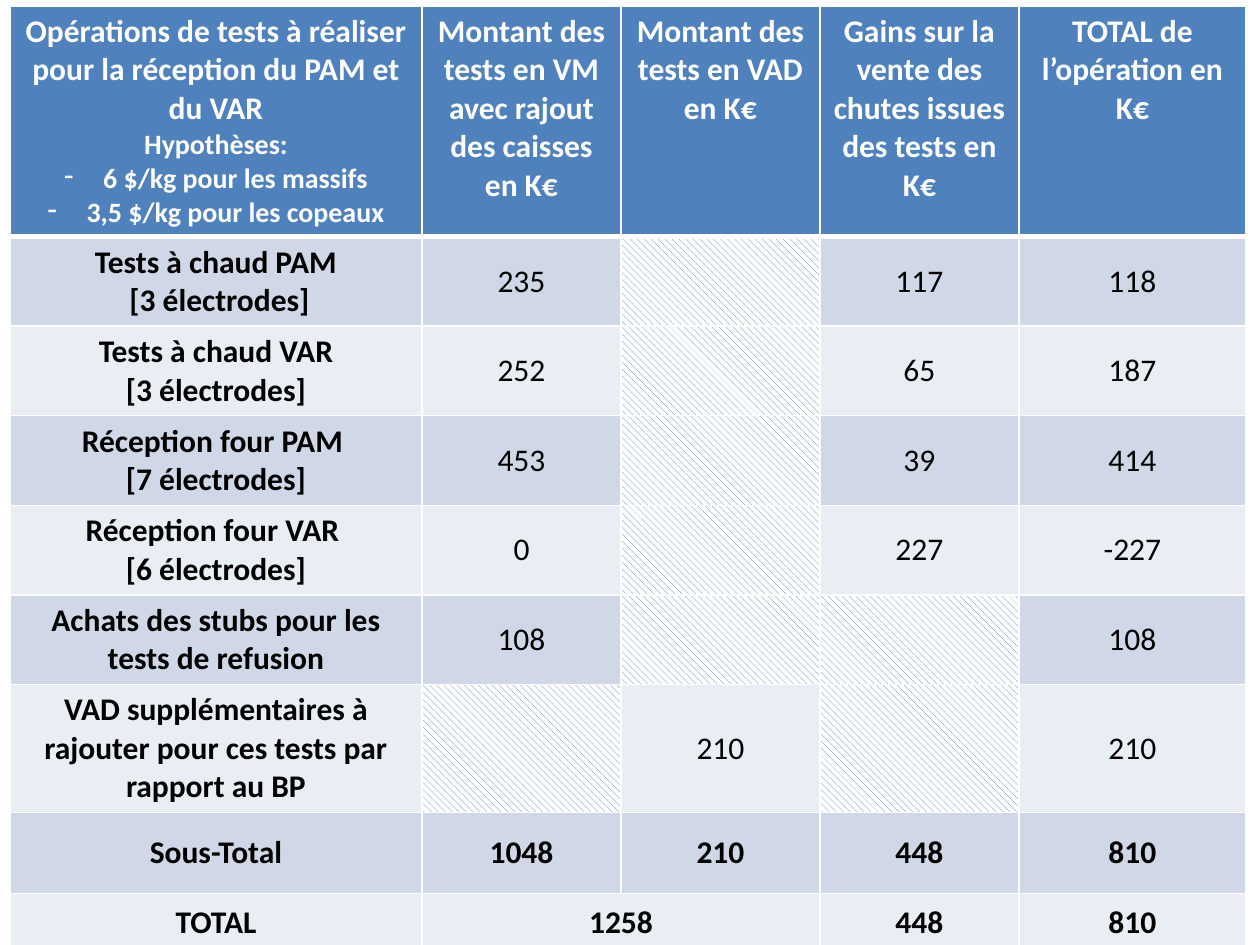
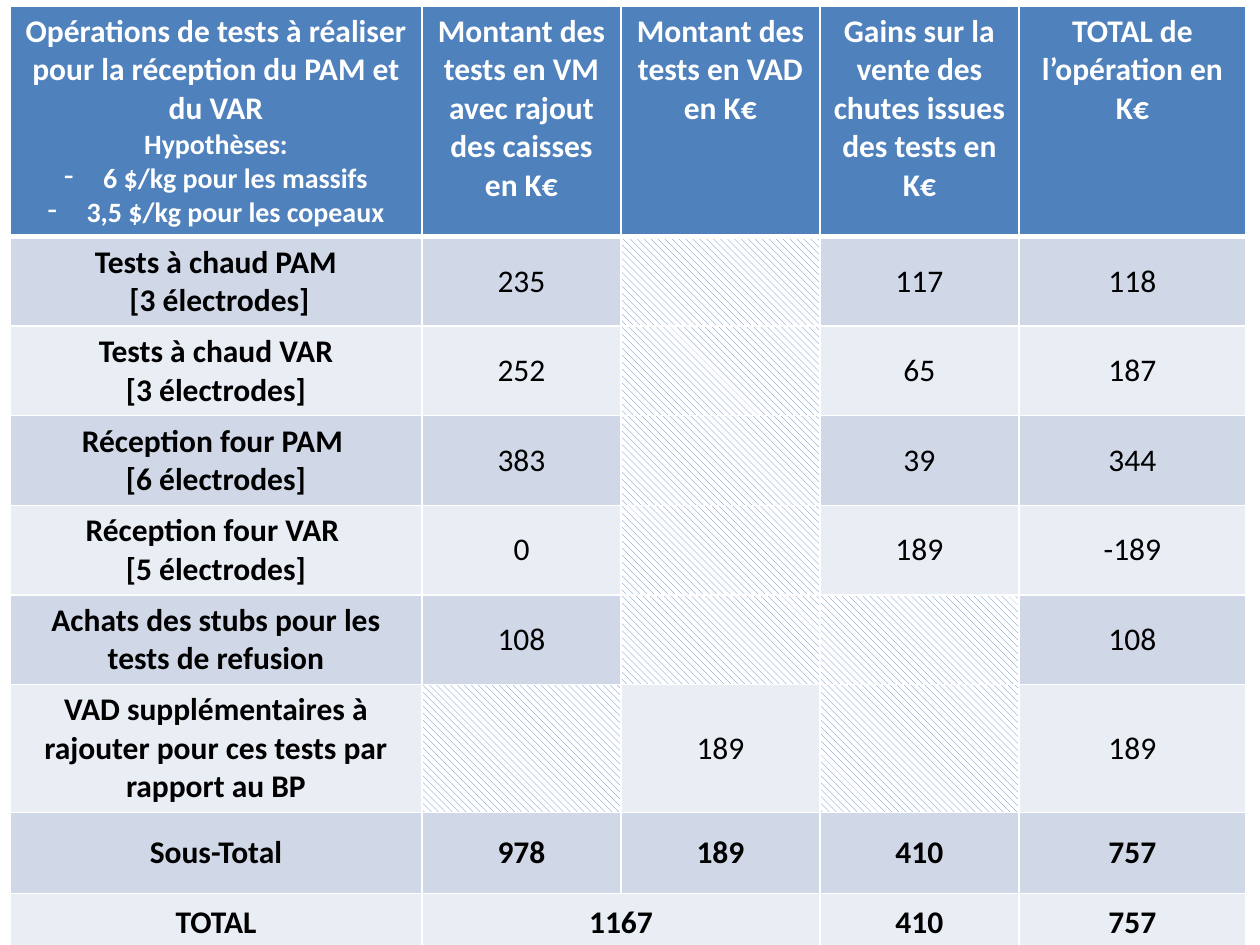
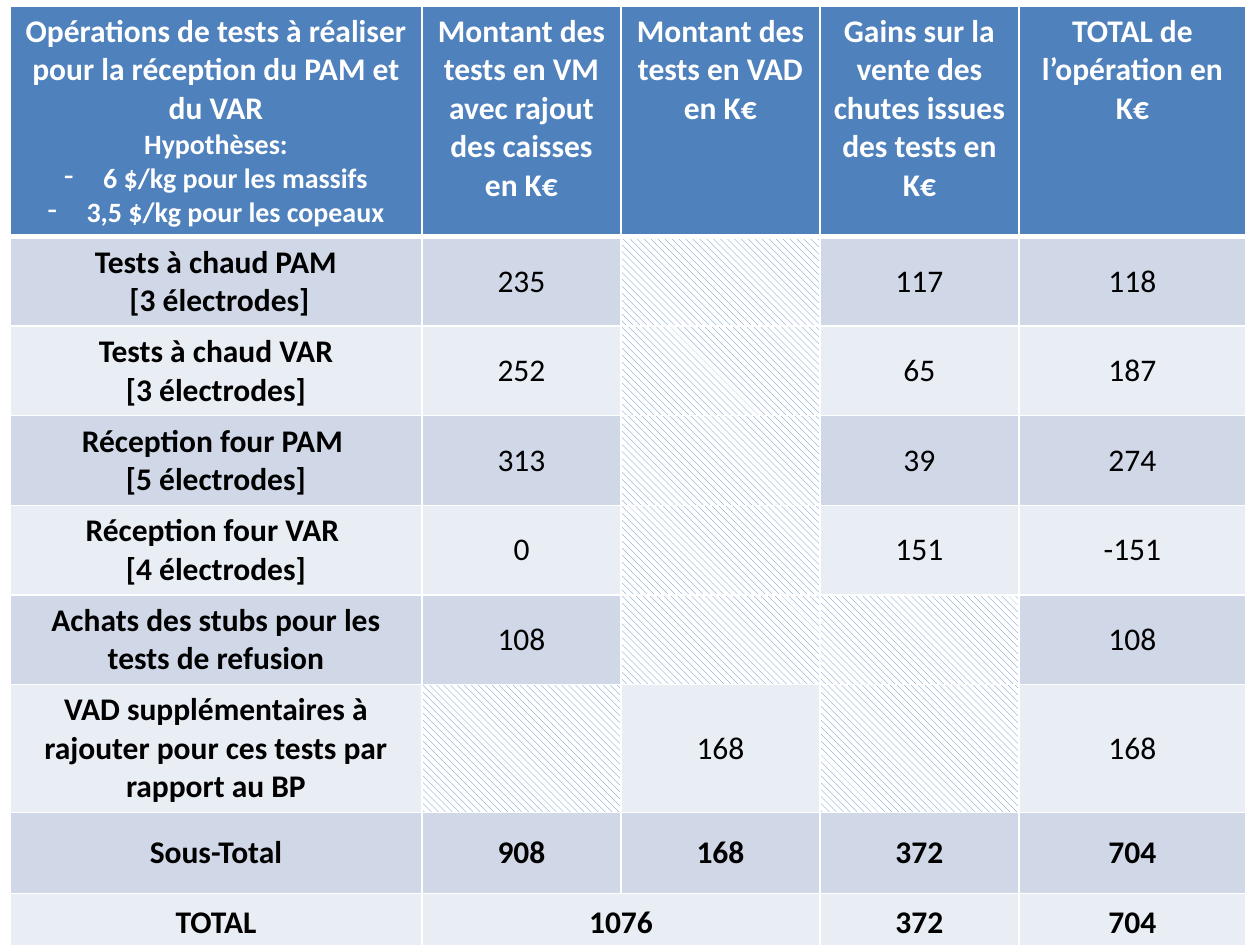
import lxml.etree
import pptx
import pptx.dml.color
import pptx.enum.dml
import pptx.enum.text
import pptx.oxml.ns
import pptx.util

SCALE = 914400 / 126
BLUE, WHITE, BLACK = "4F81BD", "FFFFFF", "000000"
BANDS = ("D0D8E8", "E9EDF4")
COLS = (412, 199, 199, 199, 227)
ROWS = (226, 88, 88, 88, 88, 88, 125, 81, 58)
HEADS = (
    ("Opérations de tests à réaliser pour la réception du PAM et du VAR",
     "Hypothèses:", "6 $/kg pour les massifs", "3,5 $/kg pour les copeaux"),
    ("Montant des tests en VM avec rajout des caisses", "en K€"),
    ("Montant des tests en VAD en K€",),
    ("Gains sur la vente des chutes issues des tests en K€",),
    ("TOTAL de l’opération en K€",),
)
# Electrodes (PAM, VAR), PAM acceptance cost, VAR scrap gain, added VAD
CASES = ((7, 6, 453, 227, 210), (6, 5, 383, 189, 189), (5, 4, 313, 151, 168))


def px(n):
    return pptx.util.Emu(round(n * SCALE))


def rgb(code):
    return pptx.dml.color.RGBColor.from_string(code)


def tag(parent, name, **attrs):
    """Append a drawing element to parent."""
    return lxml.etree.SubElement(parent, pptx.oxml.ns.qn("a:" + name), attrs)


def edge(cell, top, bottom):
    """Draw white borders, with top and bottom widths in points."""
    props = cell._tc.get_or_add_tcPr()
    for side, width in zip("LRTB", (1, 1, top, bottom)):
        line = tag(props, "ln" + side, w=str(pptx.util.Pt(width)))
        tag(tag(line, "solidFill"), "srgbClr", val=WHITE)


def paint(cell, color):
    cell.fill.solid()
    cell.fill.fore_color.rgb = rgb(color)


def hatch(cell):
    fill = cell.fill
    fill.patterned()
    fill.pattern = pptx.enum.dml.MSO_PATTERN.WIDE_DOWNWARD_DIAGONAL
    fill.fore_color.rgb = rgb(BLUE)
    fill.back_color.rgb = rgb(WHITE)


def write(cell, lines, color, bold):
    cell.text_frame.text = "\n".join(lines)
    style = {"name": "Calibri", "size": pptx.util.Pt(18), "bold": bold}
    for para in cell.text_frame.paragraphs:
        para.alignment = pptx.enum.text.PP_ALIGN.CENTER
        for run in para.runs:
            for key, value in style.items():
                setattr(run.font, key, value)
            run.font.color.rgb = rgb(color)


def notes(cell):
    """Shrink the assumptions and put dashes before the prices."""
    paras = cell.text_frame.paragraphs
    for para in paras[1:]:
        para.runs[0].font.size = pptx.util.Pt(16)
    for para in paras[2:]:
        props = para._p.get_or_add_pPr()
        for key, value in {"marL": px(39), "indent": -px(39)}.items():
            props.set(key, str(value))
        tag(props, "buChar", char="-")


def budget(pam, var, cost, gain, vad):
    """Return label lines and VM, VAD, gain and net amounts by row."""
    items = [
        (("Tests à chaud PAM", " [3 électrodes]"), 235, None, 117),
        (("Tests à chaud VAR", "[3 électrodes]"), 252, None, 65),
        (("Réception four PAM ", f"[{pam} électrodes]"), cost, None, 39),
        (("Réception four VAR ", f"[{var} électrodes]"), 0, None, gain),
        (("Achats des stubs pour les tests de refusion",), 108, None, None),
        (("VAD supplémentaires à rajouter pour ces tests par rapport au BP",),
         None, vad, None),
    ]
    sums = [sum(item[col] or 0 for item in items) for col in (1, 2, 3)]
    items.append((("Sous-Total",), *sums))
    rows = [(*item, (item[1] or 0) + (item[2] or 0) - (item[3] or 0))
            for item in items]
    spent = sums[0] + sums[1]
    rows.append((("TOTAL",), spent, None, sums[2], spent - sums[2]))
    return rows


def head(table):
    for col, lines in enumerate(HEADS):
        cell = table.cell(0, col)
        edge(cell, 1, 3)
        paint(cell, BLUE)
        write(cell, lines, WHITE, True)
    notes(table.cell(0, 0))


def body(table, rows):
    last = len(rows)
    table.cell(last, 1).merge(table.cell(last, 2))
    for row, (label, *values) in enumerate(rows, 1):
        for col, lines in enumerate([label, *values]):
            cell = table.cell(row, col)
            edge(cell, 3 if row == 1 else 1, 1)
            cell.vertical_anchor = pptx.enum.text.MSO_ANCHOR.MIDDLE
            if lines is None and not cell.is_spanned:
                hatch(cell)
                continue
            paint(cell, BANDS[(row - 1) % 2])
            if lines is not None:
                text = lines if col == 0 else (str(lines),)
                write(cell, text, BLACK, col == 0 or row >= last - 1)


def grid(slide, case):
    table = slide.shapes.add_table(
        len(ROWS), len(COLS), px(10), px(6), px(sum(COLS)), px(sum(ROWS))
    ).table
    for col, width in zip(table.columns, COLS):
        col.width = px(width)
    for row, height in zip(table.rows, ROWS):
        row.height = px(height)
    head(table)
    body(table, budget(*case))


def main():
    deck = pptx.Presentation()
    deck.slide_width, deck.slide_height = px(1260), px(945)
    for case in CASES:
        grid(deck.slides.add_slide(deck.slide_layouts[6]), case)
    deck.save("out.pptx")


if __name__ == "__main__":
    main()
